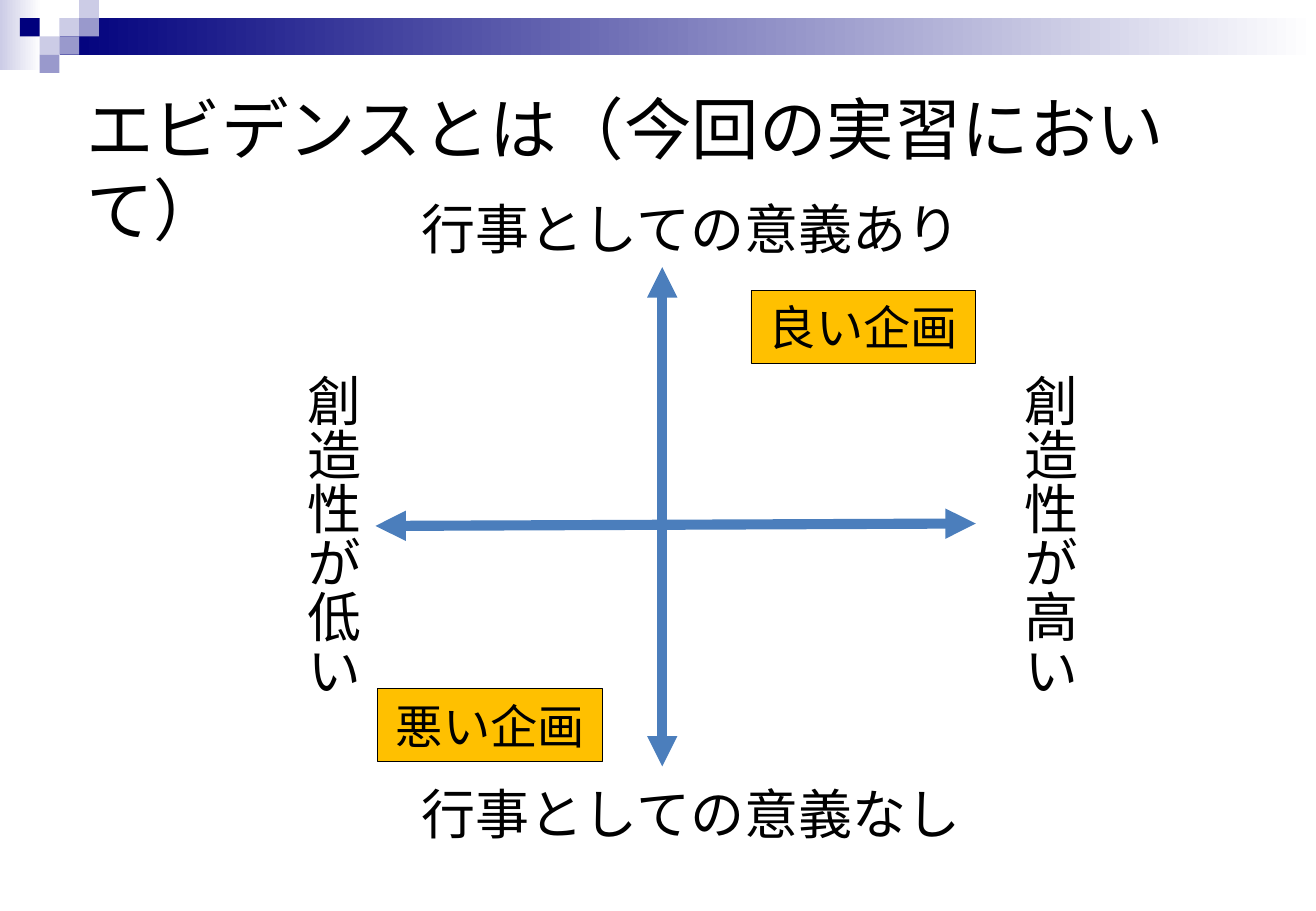
from pptx import Presentation
from pptx.dml.color import RGBColor as RGB
from pptx.enum.shapes import MSO_CONNECTOR as LINE, MSO_SHAPE as SHAPE
from pptx.enum.text import MSO_ANCHOR as ANCHOR, MSO_AUTO_SIZE as FIT, PP_ALIGN as ALIGN
from pptx.oxml.ns import qn
from pptx.util import Inches, Pt
from lxml.etree import SubElement

BLACK = RGB(0, 0, 0)
WHITE = RGB(0xFF, 0xFF, 0xFF)
NAVY = RGB(0x00, 0x00, 0x7D)
LILAC = RGB(0xCC, 0xCC, 0xE6)
MAUVE = RGB(0x99, 0x99, 0xCC)
AMBER = RGB(0xFF, 0xC0, 0x00)
BLUE = RGB(0x4B, 0x7E, 0xBC)

prs = Presentation()
prs.slide_width, prs.slide_height = Inches(10.83), Inches(7.5)
slide = prs.slides.add_slide(prs.slide_layouts[5])
shapes = slide.shapes


def add_rect(x, y, w, h, color):
    rect = shapes.add_shape(SHAPE.RECTANGLE, Inches(x), Inches(y), Inches(w), Inches(h))
    rect.shadow.inherit = False
    rect.fill.solid()
    rect.fill.fore_color.rgb = color
    rect.line.fill.background()
    return rect


def set_text(shape, text, size, align, anchor=ANCHOR.TOP, wrap=True):
    frame = shape.text_frame
    frame.text = text
    frame.word_wrap = wrap
    frame.auto_size = FIT.NONE
    frame.vertical_anchor = anchor
    para = frame.paragraphs[0]
    para.alignment = align
    font = para.runs[0].font
    font.name, font.size, font.color.rgb = "Arial", Pt(size), BLACK


# Banner: two fading bars, then a checker of small tiles
for x, y, w, h, color in [(0, 0, 0.34, 0.58, LILAC), (0.49, 0.15, 10.34, 0.3, NAVY)]:
    bar = add_rect(x, y, w, h, color)
    bar.fill.gradient()
    bar.fill.gradient_angle = 0
    for stop, tint in zip(bar.fill.gradient_stops, (color, WHITE)):
        stop.color.rgb = tint

TILE_W, TILE_H = 0.163, 0.15
for col, row, color in [(3, 1, LILAC), (4, 0, LILAC), (4, 1, MAUVE), (2, 2, LILAC),
                        (1, 1, NAVY), (3, 2, MAUVE), (2, 3, MAUVE)]:
    add_rect(col * TILE_W, row * TILE_H, TILE_W, TILE_H, color)

# Title
title = shapes.title
title.left, title.top = Inches(0.61), Inches(0.67)
title.width, title.height = Inches(9.17), Inches(0.77)
set_text(title, "エビデンスとは（今回の実習において）", 40, ALIGN.LEFT)

# Axes with a head at each end
for x1, y1, x2, y2 in [(3.09, 4.33, 8.03, 4.31), (5.45, 2.2, 5.45, 6.31)]:
    axis = shapes.add_connector(LINE.STRAIGHT, Inches(x1), Inches(y1), Inches(x2), Inches(y2))
    axis.line.color.rgb = BLUE
    axis.line.width = Pt(6)
    for end in ("a:headEnd", "a:tailEnd"):
        SubElement(axis.line._get_or_add_ln(), qn(end), type="triangle")
    SubElement(axis._element.spPr, qn("a:effectLst"))

# Axis labels
for y, h, text in [(1.56, 1.2, "行事としての意義あり"), (6.38, 0.76, "行事としての意義なし")]:
    label = shapes.add_textbox(Inches(3.37), Inches(y), Inches(3.59), Inches(h))
    set_text(label, text, 32, ALIGN.JUSTIFY, wrap=False)

for x, w, h, text in [(8.21, 0.74, 3.48, "創造性が高い"), (2.27, 0.78, 3.32, "創造性が低い")]:
    label = add_rect(x, 2.98, w, h, WHITE)
    set_text(label, text, 32, ALIGN.JUSTIFY, wrap=False)
    label.text_frame._txBody.bodyPr.set("vert", "eaVert")

# Good and bad plans
for x, y, text in [(6.18, 2.39, "良い企画"), (3.11, 5.67, "悪い企画")]:
    plan = add_rect(x, y, 1.85, 0.6, AMBER)
    plan.line.color.rgb = BLACK
    plan.line.width = Pt(0.5)
    set_text(plan, text, 28, ALIGN.CENTER, ANCHOR.MIDDLE)

prs.save("out.pptx")
